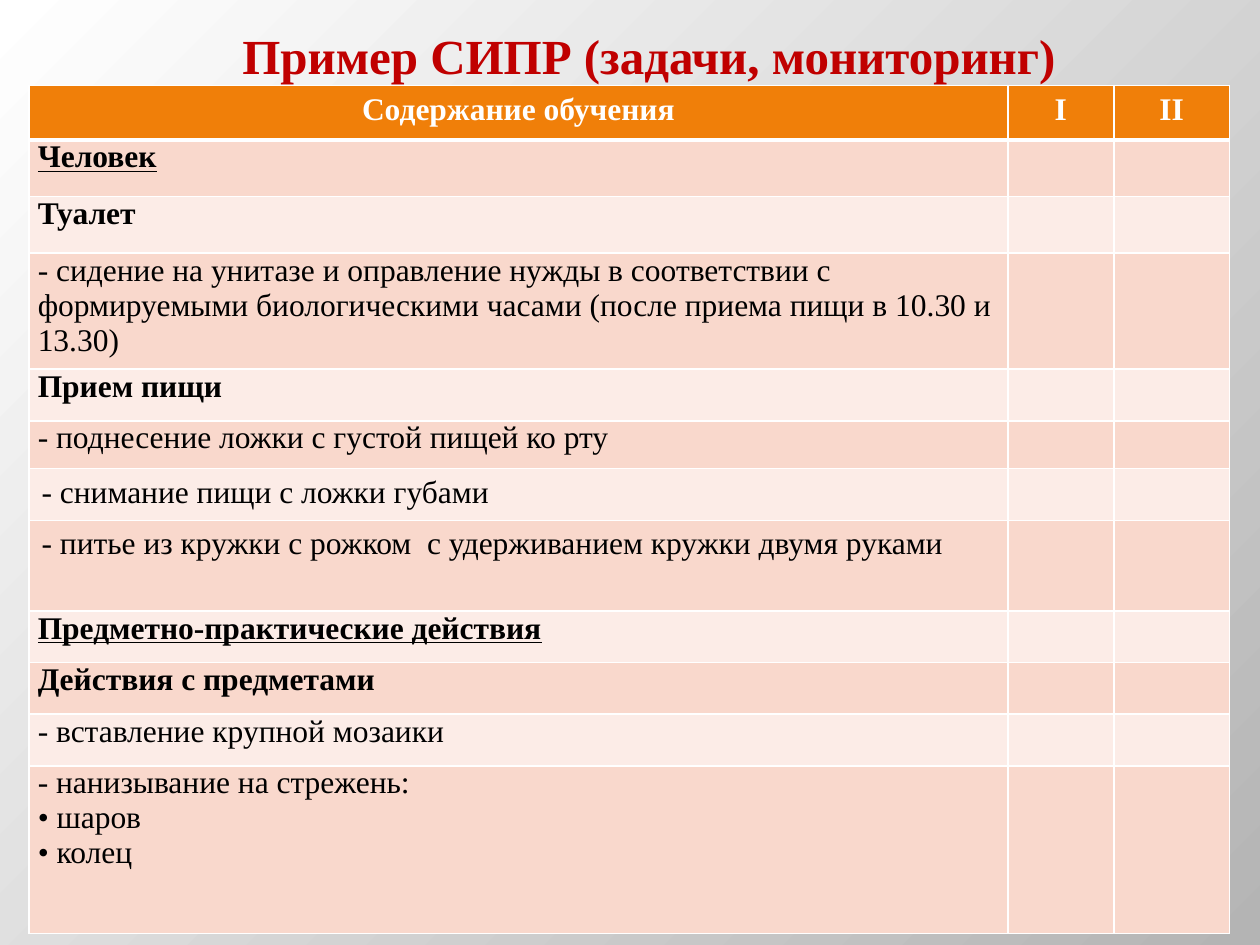
from dataclasses import dataclass

from lxml.etree import SubElement
from pptx import Presentation
from pptx.dml.color import RGBColor
from pptx.enum.text import MSO_ANCHOR, PP_ALIGN
from pptx.oxml.ns import qn
from pptx.util import Inches, Pt

FONT = "Times New Roman"
HEADER_FILL = "F07F09"
BAND_FILLS = ("F9D8CC", "FCECE7")
HEADINGS = ("Содержание обучения", "I", "II")
COLUMN_WIDTHS = (7.77, 0.84, 0.92)
HEADER_HEIGHT = 0.43


@dataclass
class Goal:
    text: str
    height: float = 0.41
    bold: bool = False
    underline: bool = False
    padded: bool = False
    bullets: str = ""


GOALS = [
    Goal("Человек", 0.45, bold=True, underline=True),
    Goal("Туалет", 0.45, bold=True),
    Goal("- сидение на унитазе и оправление нужды в соответствии с формируемыми "
         "биологическими часами (после приема пищи в 10.30 и 13.30)", 0.92),
    Goal("Прием пищи", bold=True),
    Goal("- поднесение ложки с густой пищей ко рту", 0.38),
    Goal("- снимание пищи с ложки губами", padded=True),
    Goal("- питье из кружки с рожком  с удерживанием кружки двумя руками", 0.72, padded=True),
    Goal("Предметно-практические действия", bold=True, underline=True),
    Goal("Действия с предметами", bold=True),
    Goal("- вставление крупной мозаики"),
    Goal(" нанизывание на стрежень:\n шаров\n колец", 1.33, bullets="-••"),
]


def rgb(value: str) -> RGBColor:
    return RGBColor.from_string(value)


def format_text(tf, size: float, color: str, bold: bool, underline: bool = False, align=None) -> None:
    for p in tf.paragraphs:
        p.alignment = align
        for r in p.runs:
            r.font.name = FONT
            r.font.size = Pt(size)
            r.font.bold = bold
            r.font.underline = underline
            r.font.color.rgb = rgb(color)


def add_bullet(p, char: str) -> None:
    pPr = p._p.get_or_add_pPr()
    pPr.set("marL", "0")
    pPr.set("indent", "0")
    SubElement(pPr, qn("a:buFont"), typeface=FONT)
    SubElement(pPr, qn("a:buChar"), char=char)


def style_cell(cell, fill: str, top: float = 1, bottom: float = 1) -> None:
    tcPr = cell._tc.get_or_add_tcPr()
    for side, width in (("L", 1), ("R", 1), ("T", top), ("B", bottom)):
        ln = SubElement(tcPr, qn(f"a:ln{side}"), w=str(Pt(width)))
        SubElement(SubElement(ln, qn("a:solidFill")), qn("a:srgbClr"), val="FFFFFF")
    cell.fill.solid()
    cell.fill.fore_color.rgb = rgb(fill)


def set_background(s) -> None:
    fill = s.background.fill
    fill.gradient()
    fill.gradient_angle = 315
    for stop, color in zip(fill.gradient_stops, ("FFFFFF", "B4B4B4")):
        stop.color.rgb = rgb(color)


def add_title(s, text: str) -> None:
    sp = s.shapes.title
    sp.left, sp.top = Inches(0.47), Inches(-0.23)
    sp.width, sp.height = Inches(9.36), Inches(1.33)
    tf = sp.text_frame
    tf.text = text
    tf.vertical_anchor = MSO_ANCHOR.MIDDLE
    format_text(tf, 28, "C00000", True, align=PP_ALIGN.CENTER)


def fill_header(table) -> None:
    table.rows[0].height = Inches(HEADER_HEIGHT)
    for cell, heading in zip(table.rows[0].cells, HEADINGS):
        cell.text_frame.text = heading
        format_text(cell.text_frame, 18, "FFFFFF", True, align=PP_ALIGN.CENTER)
        style_cell(cell, HEADER_FILL, bottom=3)


def fill_goal(row, goal: Goal, index: int) -> None:
    row.height = Inches(goal.height)
    for cell in row.cells:
        if not goal.padded:
            cell.margin_left = cell.margin_right = Inches(0.07)
            cell.margin_top = cell.margin_bottom = 0
        style_cell(cell, BAND_FILLS[index % 2], top=1 if index else 3)
    tf = row.cells[0].text_frame
    tf.text = goal.text
    format_text(tf, 18, "000000", goal.bold, goal.underline)
    for p, char in zip(tf.paragraphs, goal.bullets):
        add_bullet(p, char)


def add_goal_table(s) -> None:
    height = HEADER_HEIGHT + sum(goal.height for goal in GOALS)
    table = s.shapes.add_table(
        len(GOALS) + 1, len(HEADINGS), Inches(0.23), Inches(0.68),
        Inches(sum(COLUMN_WIDTHS)), Inches(height)).table
    for column, width in zip(table.columns, COLUMN_WIDTHS):
        column.width = Inches(width)
    fill_header(table)
    for index, goal in enumerate(GOALS):
        fill_goal(table.rows[index + 1], goal, index)


def main() -> None:
    prs = Presentation()
    prs.slide_width, prs.slide_height = Inches(10), Inches(7.5)
    s = prs.slides.add_slide(prs.slide_layouts[5])
    set_background(s)
    add_title(s, "Пример СИПР (задачи, мониторинг)")
    add_goal_table(s)
    prs.save("out.pptx")


if __name__ == "__main__":
    main()
